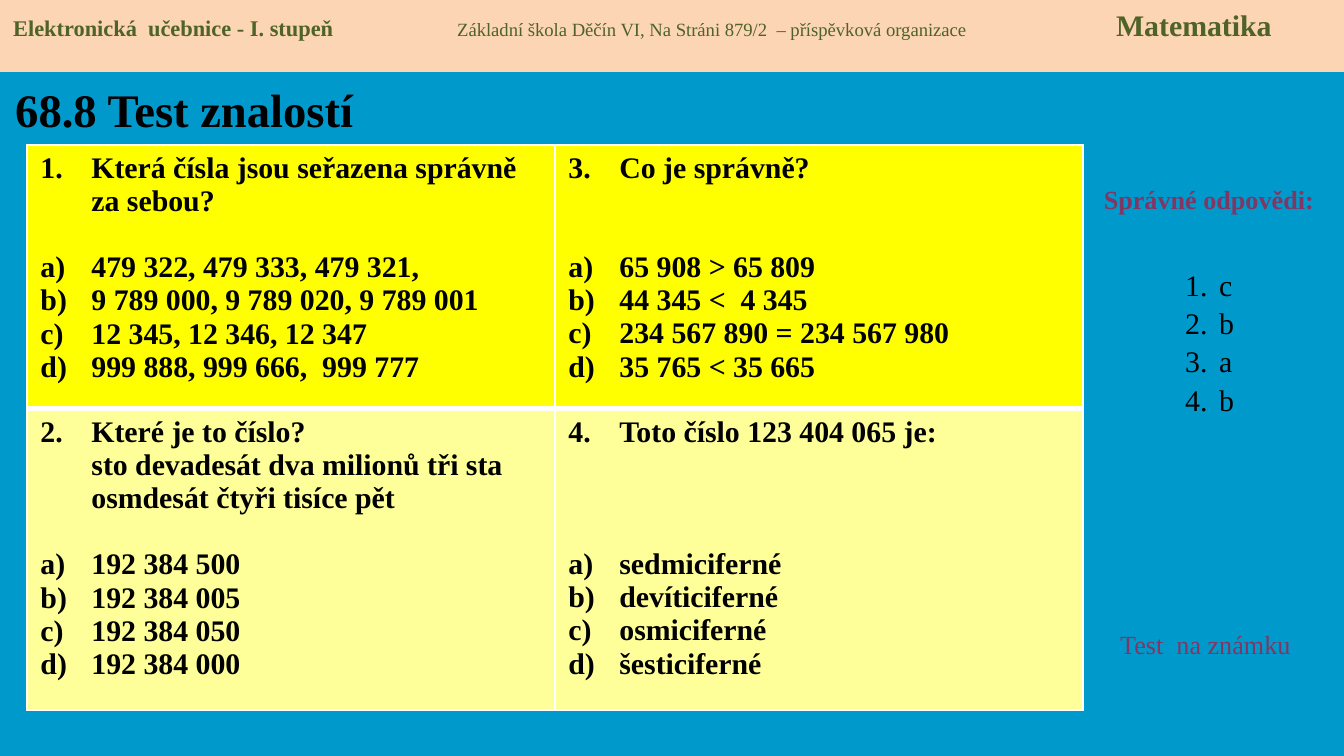
"""Build a maths quiz slide with a question table and an answer key."""
from dataclasses import dataclass
from typing import NamedTuple

from lxml.etree import SubElement as Sub
from pptx import Presentation as Deck
from pptx.dml.color import RGBColor as Rgb
from pptx.enum.shapes import MSO_SHAPE as Shape
from pptx.enum.text import MSO_ANCHOR as Anchor, PP_ALIGN as Align
from pptx.oxml.ns import qn
from pptx.util import Pt

SCALE = 9144000 / 1344
FONT = "Times New Roman"
LINE = 17.7
INDENT = 51
COLORS = {
    "back": "0099CC", "band": "FCD5B5", "green": "4F6228", "plum": "813763",
    "ink": "000000", "edge": "FFFFFF", "top": "FFFF00", "low": "FFFF99",
}
STYLES = {
    "title": {"size": Pt(25), "bold": True},
    "quiz": {"size": Pt(16), "bold": True},
    "plain": {"size": Pt(16), "bold": False},
    "label": {"size": Pt(14), "bold": True},
    "note": {"size": Pt(14), "bold": False},
    "book": {"size": Pt(12), "bold": True},
    "school": {"size": Pt(10), "bold": False},
}


class Box(NamedTuple):
    left: int
    top: int
    width: int
    height: int


@dataclass
class Label:
    box: Box
    text: str
    style: str
    color: str
    wrap: bool = True
    align: Align = Align.LEFT
    anchor: Anchor = Anchor.TOP


@dataclass
class Quiz:
    row: int
    col: int
    start: int
    ask: str
    picks: list[str]
    gap: int
    more: str = ""


LABELS = [
    Label(Box(2, 74, 370, 70), "68.8 Test znalostí", "title", "ink",
          wrap=False, anchor=Anchor.MIDDLE),
    Label(Box(1082, 177, 254, 46), "Správné odpovědi:", "label", "plum",
          align=Align.CENTER),
    Label(Box(1107, 622, 211, 46), "Test  na známku", "note", "plum"),
]
QUIZZES = [
    Quiz(0, 0, 1, "Která čísla jsou seřazena správně za sebou?",
         ["479 322, 479 333, 479 321,", "9 789 000, 9 789 020, 9 789 001",
          "12 345, 12 346, 12 347", "999 888, 999 666,  999 777"], 1),
    Quiz(0, 1, 3, "Co je správně?",
         ["65 908 > 65 809", "44 345 <  4 345",
          "234 567 890 = 234 567 980", "35 765 < 35 665"], 2),
    Quiz(1, 0, 2, "Které je to číslo?",
         ["192 384 500", "192 384 005", "192 384 050", "192 384 000"], 1,
         "sto devadesát dva milionů tři sta osmdesát čtyři tisíce pět"),
    Quiz(1, 1, 4, "Toto číslo 123 404 065 je:",
         ["sedmiciferné", "devíticiferné", "osmiciferné", "šesticiferné"], 3),
]
HEADS = [("Elektronická  učebnice - I. stupeň", "book"),
         ("\tZákladní škola Děčín VI, Na Stráni 879/2  – příspěvková organizace",
          "school"),
         ("\tMatematika", "quiz")]


def px(num: int) -> int:
    """Turn pixels into EMU."""
    return round(num * SCALE)


def tint(name: str) -> Rgb:
    """Look up a colour."""
    return Rgb.from_string(COLORS[name])


def write(para, text: str, style: str, color: str) -> None:
    """Add a styled run to a paragraph."""
    run = para.add_run()
    run.text = text
    for key, val in (STYLES[style] | {"name": FONT}).items():
        setattr(run.font, key, val)
    run.font.color.rgb = tint(color)


def number(para, kind: str, hang: int, start: int = 1) -> None:
    """Give a paragraph a hanging automatic number."""
    props = para._p.get_or_add_pPr()
    props.set("marL", str(px(hang)))
    props.set("indent", str(-px(hang)))
    mark = Sub(props, qn("a:buAutoNum"), type=kind)
    if start > 1:
        mark.set("startAt", str(start))


def edge(cell, row: int) -> None:
    """Draw the white borders of a cell."""
    props = cell._tc.get_or_add_tcPr()
    heavy = {"lnB": 3} if row == 0 else {"lnT": 3}
    for spot, side in enumerate(("lnL", "lnR", "lnT", "lnB")):
        line = Sub(props, qn(f"a:{side}"), w=str(Pt(heavy.get(side, 1))))
        fill = Sub(line, qn("a:solidFill"))
        Sub(fill, qn("a:srgbClr"), val=COLORS["edge"])
        props.insert(spot, line)


def frame(slide, box: Box):
    """Add a wrapping text box and return its text frame."""
    area = slide.shapes.add_textbox(*map(px, box)).text_frame
    area.word_wrap = True
    return area


def draw_label(slide, label: Label) -> None:
    """Draw a single line of text."""
    area = frame(slide, label.box)
    area.word_wrap = label.wrap
    area.vertical_anchor = label.anchor
    para = area.paragraphs[0]
    para.alignment = label.align
    write(para, label.text, label.style, label.color)


def draw_quiz(grid, quiz: Quiz) -> None:
    """Fill one cell with a question and its choices."""
    cell = grid.cell(quiz.row, quiz.col)
    cell.fill.solid()
    cell.fill.fore_color.rgb = tint(("top", "low")[quiz.row])
    edge(cell, quiz.row)
    area = cell.text_frame
    para = area.paragraphs[0]
    number(para, "arabicPeriod", INDENT, quiz.start)
    write(para, quiz.ask, "quiz", "ink")
    if quiz.more:
        para = area.add_paragraph()
        para._p.get_or_add_pPr().set("marL", str(px(INDENT)))
        write(para, quiz.more, "quiz", "ink")
    for spot, pick in enumerate(quiz.picks):
        para = area.add_paragraph()
        if spot == 0:
            para.space_before = Pt(quiz.gap * LINE)
        number(para, "alphaLcParenR", INDENT)
        write(para, pick, "quiz", "ink")


def draw_key(slide, box: Box, keys: str) -> None:
    """List the right answers."""
    area = frame(slide, box)
    area.margin_top = px(42)
    for spot, key in enumerate(keys):
        para = area.add_paragraph() if spot else area.paragraphs[0]
        para.line_spacing = 1.07
        number(para, "arabicPeriod", 34)
        write(para, key, "plain", "ink")


def draw_head(slide, box: Box) -> None:
    """Draw the header band with tabbed text."""
    band = slide.shapes.add_shape(Shape.RECTANGLE, *map(px, box))
    band.shadow.inherit = False
    band.fill.solid()
    band.fill.fore_color.rgb = tint("band")
    band.line.fill.background()
    band.text_frame.vertical_anchor = Anchor.TOP
    para = band.text_frame.paragraphs[0]
    para.alignment = Align.LEFT
    tabs = Sub(para._p.get_or_add_pPr(), qn("a:tabLst"))
    for stop in (444, 1103):
        Sub(tabs, qn("a:tab"), pos=str(px(stop)), algn="l")
    for text, style in HEADS:
        write(para, text, style, "green")


def main() -> None:
    """Build and save the slide."""
    deck = Deck()
    deck.slide_width, deck.slide_height = px(1344), px(756)
    slide = deck.slides.add_slide(deck.slide_layouts[6])
    slide.background.fill.solid()
    slide.background.fill.fore_color.rgb = tint("back")
    for label in LABELS:
        draw_label(slide, label)
    grid = slide.shapes.add_table(2, 2, *map(px, Box(27, 145, 1056, 565))).table
    grid.first_row = grid.horz_banding = False
    for row, tall in zip(grid.rows, (264, 301)):
        row.height = px(tall)
    for quiz in QUIZZES:
        draw_quiz(grid, quiz)
    draw_key(slide, Box(1172, 222, 74, 267), "cbab")
    draw_head(slide, Box(0, 0, 1344, 72))
    deck.save("out.pptx")


if __name__ == "__main__":
    main()
